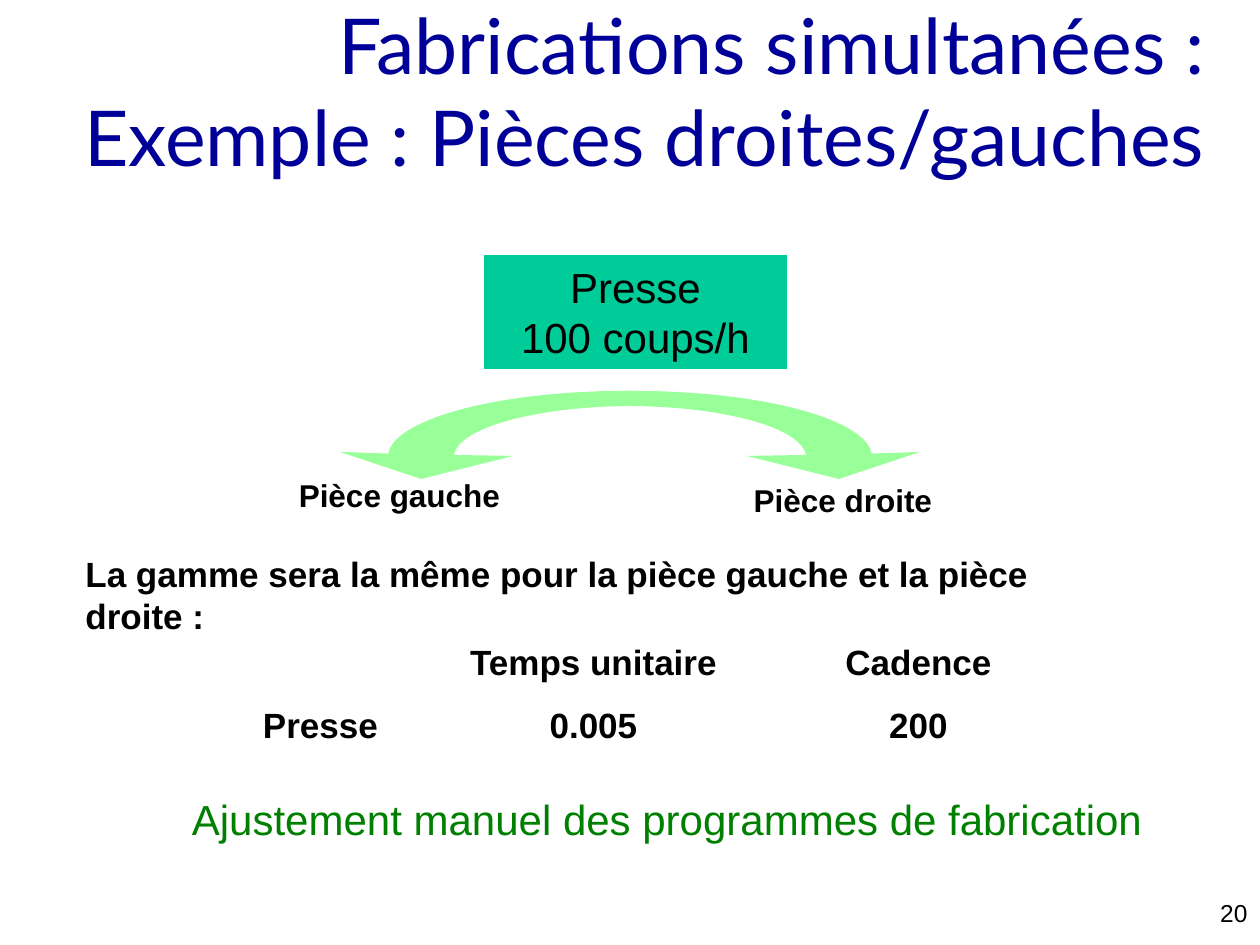
import pptx
import pptx.util
import pptx.dml.color
import pptx.enum.shapes
import pptx.enum.text
import pptx.oxml
import pptx.oxml.ns

RGB = pptx.dml.color.RGBColor
ALIGN = pptx.enum.text.PP_ALIGN
ANCHOR = pptx.enum.text.MSO_ANCHOR
PX = 914400 // 126
PAGE_WIDTH, PAGE_HEIGHT = 1260, 945

BLACK = RGB(0x00, 0x00, 0x00)
WHITE = RGB(0xFF, 0xFF, 0xFF)
NAVY = RGB(0x00, 0x00, 0x99)
TEAL = RGB(0x00, 0xCC, 0x99)
LIGHT_GREEN = RGB(0x99, 0xFF, 0x99)
GREEN = RGB(0x00, 0x80, 0x00)

PLAIN = {"name": "Arial", "size": 24, "bold": False, "color": BLACK}
CELL = PLAIN | {"size": 20, "bold": True}
LABEL = CELL | {"size": 18}

TITLE = ["Fabrications simultanées :\vExemple : Pièces droites/gauches"]
TITLE_AREA = (0, 10, 1218, 159)
TITLE_FORMAT = PLAIN | {"name": "Lato", "size": 44, "color": NAVY}

PRESS = ["Presse", "100 coups/h"]
PRESS_AREA = (483, 254, 305, 116)

NOTES = [
    ("Pièce gauche", (286, 470, 227, 50), LABEL, ALIGN.CENTER, ANCHOR.MIDDLE, False),
    ("Pièce droite", (741, 475, 204, 50), LABEL, ALIGN.CENTER, ANCHOR.MIDDLE, False),
    ("La gamme sera la même pour la pièce gauche et la pièce droite :",
     (73, 567, 1094, 54), CELL, ALIGN.LEFT, ANCHOR.MIDDLE, True),
    ("Ajustement manuel des programmes de fabrication",
     (179, 787, 976, 63), PLAIN | {"color": GREEN}, ALIGN.CENTER, ANCHOR.MIDDLE, False),
    ("20", (998, 892, 262, 32), PLAIN | {"size": 14}, ALIGN.RIGHT, ANCHOR.TOP, True),
]

ROUTING = [
    ["", "Temps unitaire", "Cadence"],
    ["Presse", "0.005", "200"],
]
ROUTING_LEFT, ROUTING_TOP = 210, 630
COLUMN_WIDTHS = [221, 325, 325]
ROW_HEIGHT = 63

ARROW_START = (806, 455)
ARROW_PARTS = [
    [(801, 427), (721, 406), (625, 406)],
    [(524, 406), (442, 427), (442, 457)],
    [(388, 457)],
    [(388, 421), (494, 391), (625, 391)],
    [(750, 391), (853, 419), (861, 454)],
    [(920, 452)],
    [(839, 479)],
    [(747, 456)],
]


def emu(lengths):
    return [length * PX for length in lengths]


def write(frame, lines, text_format, align, anchor, wrap=True):
    settings = {"word_wrap": wrap, "vertical_anchor": anchor,
                "auto_size": pptx.enum.text.MSO_AUTO_SIZE.NONE}
    for name, value in settings.items():
        setattr(frame, name, value)
    frame.text = "\n".join(lines)
    for para in frame.paragraphs:
        para.alignment = align
        for span in para.runs:
            span.font.color.rgb = text_format["color"]
            span.font.size = pptx.util.Pt(text_format["size"])
            for name in ("name", "bold"):
                setattr(span.font, name, text_format[name])


def add_box(page, area, lines, text_format, fill=None):
    rectangle = pptx.enum.shapes.MSO_SHAPE.RECTANGLE
    box = page.shapes.add_shape(rectangle, *emu(area))
    box.shadow.inherit = False
    if fill is None:
        box.fill.background()
    else:
        box.fill.solid()
        box.fill.fore_color.rgb = fill
    box.line.color.rgb = WHITE
    box.line.width = pptx.util.Pt(0.75)
    write(box.text_frame, lines, text_format, ALIGN.CENTER, ANCHOR.MIDDLE, False)


def add_routing(page):
    for row, values in enumerate(ROUTING):
        left, top = ROUTING_LEFT, ROUTING_TOP + row * ROW_HEIGHT
        for value, width in zip(values, COLUMN_WIDTHS):
            if value:
                add_box(page, (left, top, width, ROW_HEIGHT), [value], CELL)
            left += width


def bend_curves(arrow):
    qn = pptx.oxml.ns.qn
    lines = iter(list(arrow.element.iter(qn("a:lnTo"))))
    for part in ARROW_PARTS:
        segments = [next(lines) for point in part]
        if len(segments) == 3:
            curve = segments[0].makeelement(qn("a:cubicBezTo"), {})
            segments[0].addprevious(curve)
            for segment in segments:
                curve.append(segment[0])
                segment.getparent().remove(segment)


def add_arrow(page, mirrored):
    points = [ARROW_START] + [point for part in ARROW_PARTS for point in part]
    if mirrored:
        points = [(PAGE_WIDTH - x, y) for x, y in points]
    builder = page.shapes.build_freeform(*points[0], scale=PX)
    builder.add_line_segments(points[1:], close=True)
    arrow = builder.convert_to_shape()
    bend_curves(arrow)
    arrow.shadow.inherit = False
    arrow.fill.solid()
    arrow.fill.fore_color.rgb = LIGHT_GREEN
    arrow.line.fill.background()


def main():
    deck = pptx.Presentation()
    deck.slide_width, deck.slide_height = emu((PAGE_WIDTH, PAGE_HEIGHT))
    page = deck.slides.add_slide(deck.slide_layouts[5])

    title = page.shapes.title
    for name, value in zip(("left", "top", "width", "height"), emu(TITLE_AREA)):
        setattr(title, name, value)
    write(title.text_frame, TITLE, TITLE_FORMAT, ALIGN.RIGHT, ANCHOR.MIDDLE)

    add_box(page, PRESS_AREA, PRESS, PLAIN, TEAL)
    add_routing(page)
    for mirrored in (False, True):
        add_arrow(page, mirrored)
    for text, area, text_format, align, anchor, wrap in NOTES:
        box = page.shapes.add_textbox(*emu(area))
        write(box.text_frame, [text], text_format, align, anchor, wrap)

    deck.save("out.pptx")


if __name__ == "__main__":
    main()
